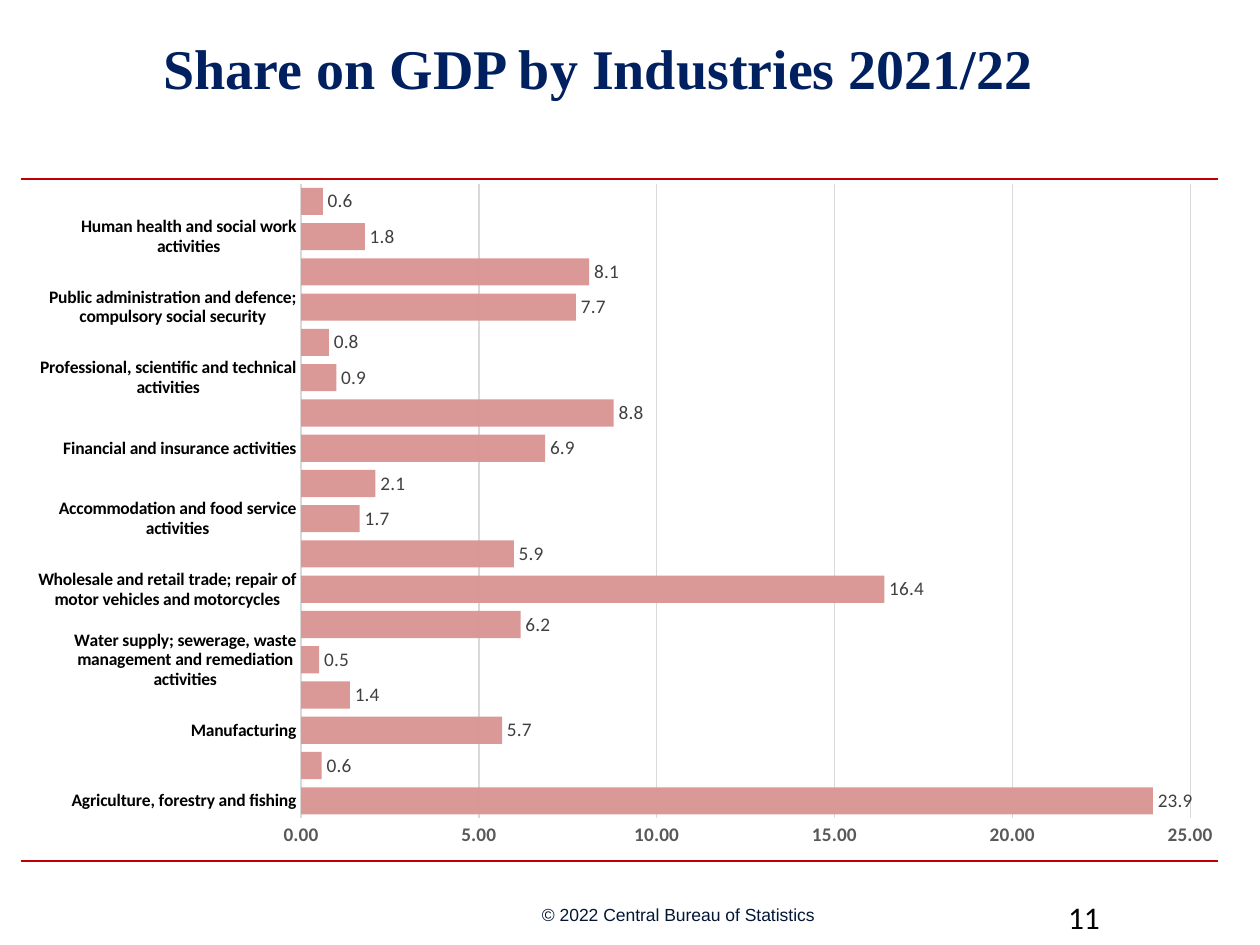
"""Build the slide showing the share of GDP by industry, 2021/22."""
from lxml import etree
from pptx import Presentation
from pptx.chart.data import CategoryChartData
from pptx.dml.color import RGBColor
from pptx.enum.chart import XL_CHART_TYPE as ChartType, XL_LABEL_POSITION as LabelPosition
from pptx.enum.chart import XL_TICK_MARK as TickMark
from pptx.enum.shapes import MSO_CONNECTOR as Connector
from pptx.enum.text import MSO_ANCHOR as Anchor, MSO_AUTO_SIZE as AutoSize, PP_ALIGN as Align
from pptx.oxml import parse_xml
from pptx.oxml.ns import qn
from pptx.util import Emu, Pt

RULE_RED = RGBColor(0xC0, 0x00, 0x00)
TITLE_NAVY = RGBColor(0x00, 0x20, 0x60)
FOOTER_NAVY = RGBColor(0x03, 0x17, 0x35)
BLACK = RGBColor(0x00, 0x00, 0x00)
BAR_PINK = RGBColor(0xD9, 0x96, 0x94)
GRID_GREY = RGBColor(0xD9, 0xD9, 0xD9)
AXIS_GREY = RGBColor(0x59, 0x59, 0x59)
LABEL_GREY = RGBColor(0x40, 0x40, 0x40)

INDUSTRIES = [
    ("Agriculture, forestry and fishing", 23.95, "23.9"),
    ("Mining and quarrying", 0.58, "0.6"),
    ("Manufacturing", 5.65, "5.7"),
    ("Electricity, gas, steam and air conditioning supply", 1.37, "1.4"),
    ("Water supply; sewerage, waste management and remediation activities", 0.51, "0.5"),
    ("Construction", 6.17, "6.2"),
    ("Wholesale and retail trade; repair of motor vehicles and motorcycles", 16.4, "16.4"),
    ("Transportation and storage", 5.98, "5.9"),
    ("Accommodation and food service activities", 1.65, "1.7"),
    ("Information and communication", 2.09, "2.1"),
    ("Financial and insurance activities", 6.86, "6.9"),
    ("Real estate activities", 8.79, "8.8"),
    ("Professional, scientific and technical activities", 0.99, "0.9"),
    ("Administrative and support service activities", 0.78, "0.8"),
    ("Public administration and defence; compulsory social security", 7.73, "7.7"),
    ("Education", 8.1, "8.1"),
    ("Human health and social work activities", 1.79, "1.8"),
    ("Arts, entertainment and recreation; Other service activities; and Activities of "
     "households as employers; undifferentiate", 0.61, "0.6"),
]


def px(length):
    return Emu(round(length * 914400 / 126))


def style(font, name, size, color, bold=False):
    font.name, font.size, font.bold = name, Pt(size), bold
    font.color.rgb = color


presentation = Presentation()
presentation.slide_width, presentation.slide_height = px(1260), px(945)
slide = presentation.slides.add_slide(presentation.slide_layouts[5])

for y in (179, 861):
    rule = slide.shapes.add_connector(Connector.STRAIGHT, px(21), px(y), px(1218), px(y))
    rule.line.color.rgb = RULE_RED
    rule.line.width = Pt(1.5)
    etree.SubElement(rule.element.spPr, qn("a:effectLst"))

title = slide.shapes.title
title.left, title.top, title.width, title.height = px(21), px(21), px(1155), px(149)
title_frame = title.text_frame
title_frame.auto_size = AutoSize.NONE
title_frame.vertical_anchor = Anchor.TOP
title_frame.margin_top = px(13)
paragraph = title_frame.paragraphs[0]
paragraph.alignment = Align.CENTER
run = paragraph.add_run()
run.text = "Share on GDP by Industries 2021/22"
style(run.font, "Times New Roman", 32, TITLE_NAVY, True)

footers = [
    ("© 2022 Central Bureau of Statistics", (542, 903, 277, 24), 0, Anchor.MIDDLE,
     ("Arial", 10, FOOTER_NAVY)),
    ("11", (1056, 892, 168, 29), 6, Anchor.TOP, ("Calibri", 18, BLACK)),
]
for text, box, inset, anchor, font in footers:
    shape = slide.shapes.add_textbox(*map(px, box))
    frame = shape.text_frame
    frame.word_wrap = True
    frame.vertical_anchor = anchor
    frame.margin_top = frame.margin_bottom = px(inset)
    frame.margin_left = frame.margin_right = px(2 * inset)
    run = frame.paragraphs[0].add_run()
    run.text = text
    style(run.font, *font)

chart_data = CategoryChartData(number_format="0.00")
chart_data.categories = [name for name, share, label in INDUSTRIES]
chart_data.add_series("Series 1", [share for name, share, label in INDUSTRIES])
chart = slide.shapes.add_chart(
    ChartType.BAR_CLUSTERED, px(21), px(170), px(1218), px(690), chart_data).chart
chart.has_legend = False
chart.has_title = False
style(chart.font, "Calibri", 10, BLACK)

category_axis = chart.category_axis
category_axis.major_tick_mark = TickMark.NONE
category_axis.format.line.color.rgb = GRID_GREY
category_axis.format.line.width = Pt(0.75)
style(category_axis.tick_labels.font, "Calibri", 10, BLACK, True)

value_axis = chart.value_axis
value_axis.minimum_scale, value_axis.maximum_scale, value_axis.major_unit = 0, 25, 5
value_axis.major_tick_mark = TickMark.NONE
value_axis.format.line.fill.background()
value_axis.major_gridlines.format.line.color.rgb = GRID_GREY
value_axis.major_gridlines.format.line.width = Pt(0.75)
value_axis.tick_labels.number_format = "0.00"
value_axis.tick_labels.number_format_is_linked = False
style(value_axis.tick_labels.font, "Calibri", 11, AXIS_GREY, True)

plot = chart.plots[0]
plot.gap_width = 30
plot.vary_by_categories = False
series = plot.series[0]
series.format.fill.solid()
series.format.fill.fore_color.rgb = BAR_PINK
bar_color = next(series.format.fill._xPr.iter(qn("a:srgbClr")))
etree.SubElement(bar_color, qn("a:alpha"), val="97000")

labels = series.data_labels
labels.show_value = True
labels.position = LabelPosition.OUTSIDE_END
labels.number_format = "0.00"
labels.number_format_is_linked = False
style(labels.font, "Calibri", 11, LABEL_GREY, True)
for index, (name, share, label) in enumerate(INDUSTRIES):
    data_label = series.points[index].data_label
    run = data_label.text_frame.paragraphs[0].add_run()
    run.text = label
    style(run.font, "Calibri", 11, LABEL_GREY)
    data_label.position = LabelPosition.OUTSIDE_END

plot_area = chart.element.chart.plotArea
for layout in plot_area.findall(qn("c:layout")):
    plot_area.remove(layout)
plot_area.insert(0, parse_xml(
    '<c:layout xmlns:c="http://schemas.openxmlformats.org/drawingml/2006/chart">'
    '<c:manualLayout><c:layoutTarget val="inner"/><c:xMode val="edge"/><c:yMode val="edge"/>'
    '<c:x val="0.23"/><c:y val="0.02"/><c:w val="0.73"/><c:h val="0.92"/>'
    '</c:manualLayout></c:layout>'))

presentation.save("out.pptx")
